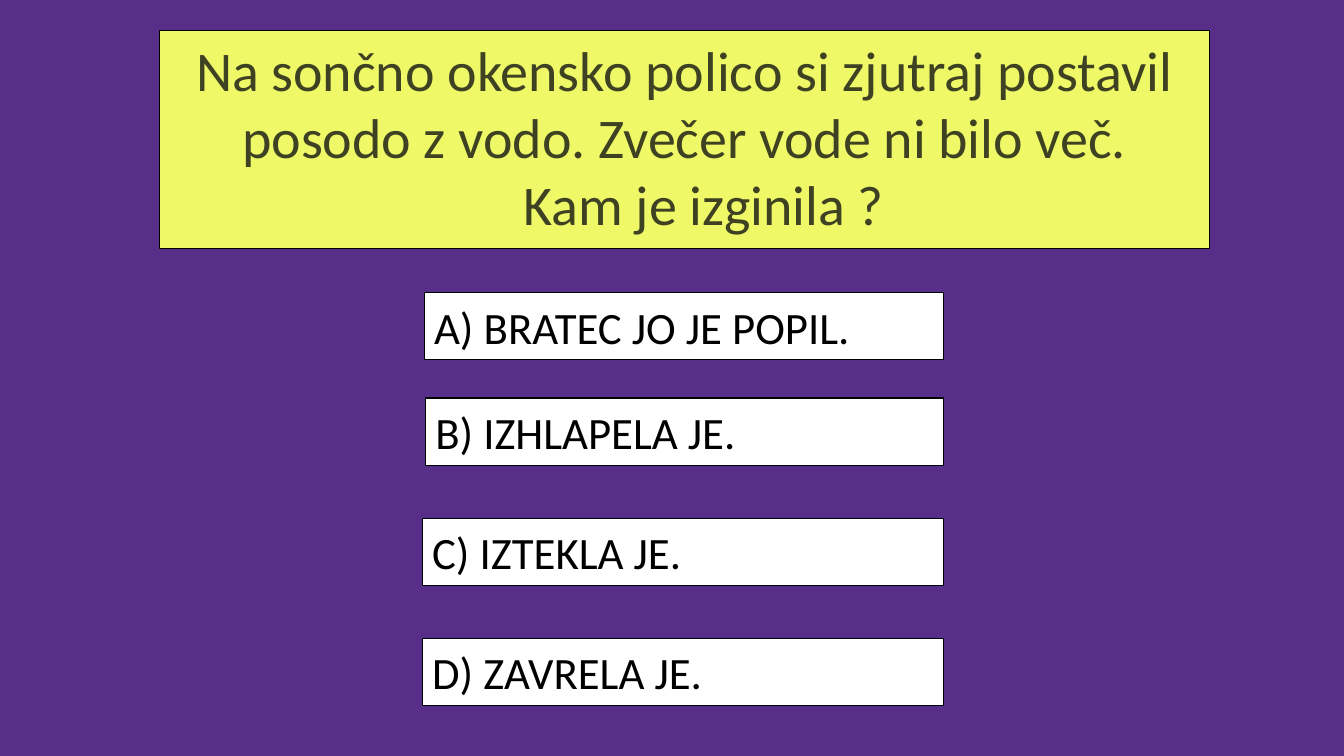
import pptx
import pptx.dml.color
import pptx.enum.shapes
import pptx.enum.text
import pptx.util

Cm = pptx.util.Cm
Pt = pptx.util.Pt
TEXT = pptx.enum.text

# Content
QUESTION = [
    "Na sončno okensko polico si zjutraj postavil posodo z vodo. "
    "Zvečer vode ni bilo več.",
    "Kam je izginila ?",
]
# Answer, left edge and top edge in cm
ANSWERS = [
    ("A) BRATEC JO JE POPIL.", 10.69, 7.37),
    ("B) IZHLAPELA JE.", 10.72, 10.03),
    ("C) IZTEKLA JE.", 10.64, 13.06),
    ("D) ZAVRELA JE.", 10.64, 16.08),
]
RIGHT, HEIGHT = 23.77, 1.7
INDENT = 0.97

THEME = {
    "font": "Calibri",
    "back": "572E88",
    "panel": "EFF967",
    "ask": "3E4223",
    "box": "FFFFFF",
    "ink": "000000",
    "ask_size": 40,
    "box_size": 32,
}


def color(name):
    return pptx.dml.color.RGBColor.from_string(THEME[name])


def place(shape, left, top, width, height):
    shape.left, shape.top = Cm(left), Cm(top)
    shape.width, shape.height = Cm(width), Cm(height)


def paint(shape, fill):
    shape.fill.solid()
    shape.fill.fore_color.rgb = color(fill)
    shape.line.color.rgb = color("ink")
    shape.line.width = Pt(0.75)


def style(para, size, ink, align):
    para.alignment = align
    para.space_before = Pt(0)
    for run in para.runs:
        run.font.name = THEME["font"]
        run.font.size = Pt(THEME[size])
        run.font.color.rgb = color(ink)


def add_question(slide):
    body = slide.placeholders[1]
    place(body, 4.01, 0.76, 26.47, 5.51)
    paint(body, "panel")
    frame = body.text_frame
    frame.text = "\n".join(QUESTION)
    frame.auto_size = TEXT.MSO_AUTO_SIZE.NONE
    frame.vertical_anchor = TEXT.MSO_ANCHOR.TOP
    for i, para in enumerate(frame.paragraphs):
        # No bullet; only the closing line is indented
        props = para._p.get_or_add_pPr()
        props.set("marL", str(Cm(INDENT * i)))
        props.set("indent", "0")
        props.append(pptx.oxml.parse_xml(
            '<a:buNone xmlns:a='
            '"http://schemas.openxmlformats.org/drawingml/2006/main"/>'))
        style(para, "ask_size", "ask", TEXT.PP_ALIGN.CENTER)


def add_answer(slide, text, left, top):
    kind = pptx.enum.shapes.MSO_SHAPE.ACTION_BUTTON_CUSTOM
    box = slide.shapes.add_shape(
        kind, Cm(left), Cm(top), Cm(RIGHT - left), Cm(HEIGHT))
    box.shadow.inherit = False
    paint(box, "box")
    frame = box.text_frame
    frame.text = text
    frame.word_wrap = True
    frame.vertical_anchor = TEXT.MSO_ANCHOR.MIDDLE
    style(frame.paragraphs[0], "box_size", "ink", TEXT.PP_ALIGN.LEFT)


def main():
    deck = pptx.Presentation()
    deck.slide_width, deck.slide_height = Cm(33.87), Cm(19.05)
    slide = deck.slides.add_slide(deck.slide_layouts[1])
    slide.background.fill.solid()
    slide.background.fill.fore_color.rgb = color("back")

    # The slide has no title
    title = slide.shapes.title._element
    title.getparent().remove(title)

    add_question(slide)
    for answer in ANSWERS:
        add_answer(slide, *answer)
    deck.save("out.pptx")


if __name__ == "__main__":
    main()
